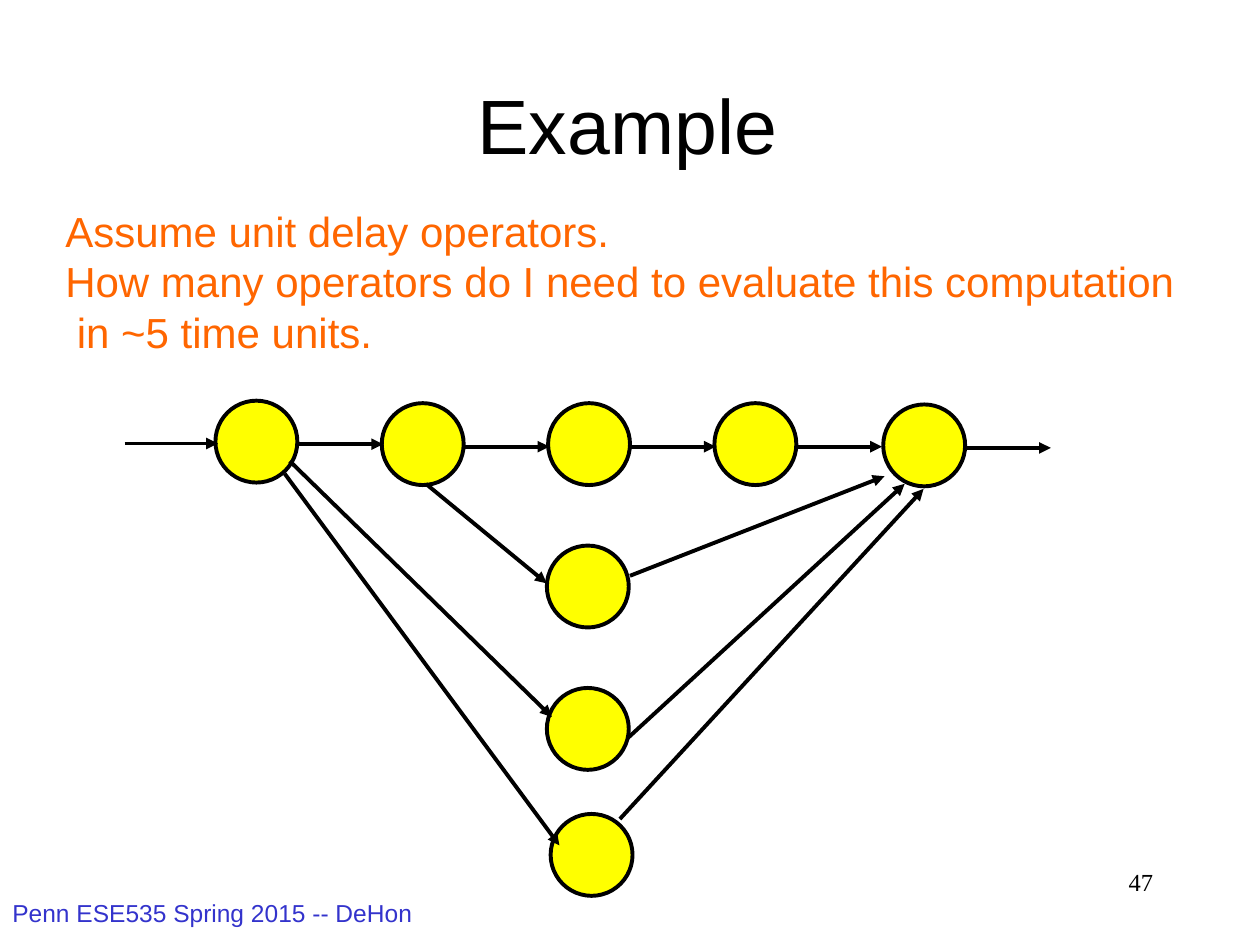
from lxml.etree import SubElement
from pptx import Presentation
from pptx.dml.color import RGBColor as Color
from pptx.enum.shapes import MSO_CONNECTOR as Connector, MSO_SHAPE as Shape
from pptx.enum.text import MSO_ANCHOR as Anchor, PP_ALIGN as Align
from pptx.oxml.ns import qn
from pptx.util import Inches, Pt

THEME = {
    "sans": "Arial", "serif": "Times New Roman",
    "ink": Color.from_string("000000"), "node": Color.from_string("FFFF00"),
    "question": Color.from_string("FF6600"), "footer": Color.from_string("3333CC"),
    "title_size": Pt(44), "question_size": Pt(24), "footer_size": Pt(14),
    "stroke": Pt(2.25),
}

TITLE = ["Example"]
QUESTION = [
    "Assume unit delay operators.",
    "How many operators do I need to evaluate this computation",
    " in ~5 time units.",
]
FOOTER = ["Penn ESE535 Spring 2015 -- DeHon"]
PAGE_NUMBER = ["47"]

NODE_SIZE = 0.65
CHAIN_NODES = [(1.71, 3.18), (3.03, 3.2), (4.35, 3.2), (5.67, 3.2), (7.01, 3.21)]
BRANCH_NODES = [(4.34, 4.33), (4.34, 5.46), (4.37, 6.46)]
CHAIN_ARROW_LENGTH = 0.67
INPUT_ARROW = ((0.99, 3.52), (1.73, 3.52))
BRANCH_ARROWS = [
    ((3.38, 3.84), (4.34, 4.63)), ((5, 4.57), (7.02, 3.78)),
    ((2.3, 3.66), (4.38, 5.69)), ((4.98, 5.86), (7.18, 3.84)),
    ((2.26, 3.76), (4.44, 6.71)), ((4.92, 6.5), (7.33, 3.88)),
]


def add_text(slide, box, lines, role, font="sans", color="ink",
             align=Align.LEFT, anchor=Anchor.TOP, wrap=True):
    shape = slide.shapes.add_textbox(*map(Inches, box))
    frame = shape.text_frame
    frame.word_wrap = wrap
    frame.vertical_anchor = anchor
    for index, line in enumerate(lines):
        paragraph = frame.add_paragraph() if index else frame.paragraphs[0]
        paragraph.alignment = align
        run = paragraph.add_run()
        run.text = line
        run.font.name = THEME[font]
        run.font.size = THEME[role + "_size"]
        run.font.color.rgb = THEME[color]


def add_node(slide, left, top):
    shape = slide.shapes.add_shape(
        Shape.OVAL, *map(Inches, (left, top, NODE_SIZE, NODE_SIZE)))
    shape.shadow.inherit = False
    shape.fill.solid()
    shape.fill.fore_color.rgb = THEME["node"]
    shape.line.color.rgb = THEME["ink"]
    shape.line.width = THEME["stroke"]


def add_arrow(slide, start, end):
    arrow = slide.shapes.add_connector(
        Connector.STRAIGHT, *map(Inches, (*start, *end)))
    arrow.line.color.rgb = THEME["ink"]
    arrow.line.width = THEME["stroke"]
    SubElement(arrow.line._get_or_add_ln(), qn("a:tailEnd"), type="triangle")
    SubElement(arrow._element.spPr, qn("a:effectLst"))


def main():
    """Build the operator graph slide."""
    presentation = Presentation()
    presentation.slide_width, presentation.slide_height = Inches(10), Inches(7.5)
    slide = presentation.slides.add_slide(presentation.slide_layouts[6])

    add_text(slide, (0, 7.08, 3.83, 0.42), FOOTER, "footer", color="footer")
    add_text(slide, (7.17, 6.83, 2.08, 0.5), PAGE_NUMBER, "footer",
             font="serif", align=Align.RIGHT)
    add_text(slide, (0.73, 0.36, 8.5, 1.25), TITLE, "title",
             align=Align.CENTER, anchor=Anchor.MIDDLE)

    for left, top in CHAIN_NODES + BRANCH_NODES:
        add_node(slide, left, top)

    chain_arrows = []
    for left, top in CHAIN_NODES:
        start, level = left + NODE_SIZE + 0.01, top + NODE_SIZE / 2 + 0.02
        chain_arrows.append(((start, level), (start + CHAIN_ARROW_LENGTH, level)))
    for start, end in [INPUT_ARROW] + chain_arrows + BRANCH_ARROWS:
        add_arrow(slide, start, end)

    add_text(slide, (0.42, 1.58, 9.1, 1.31), QUESTION, "question",
             color="question", wrap=False)
    presentation.save("out.pptx")


if __name__ == "__main__":
    main()
